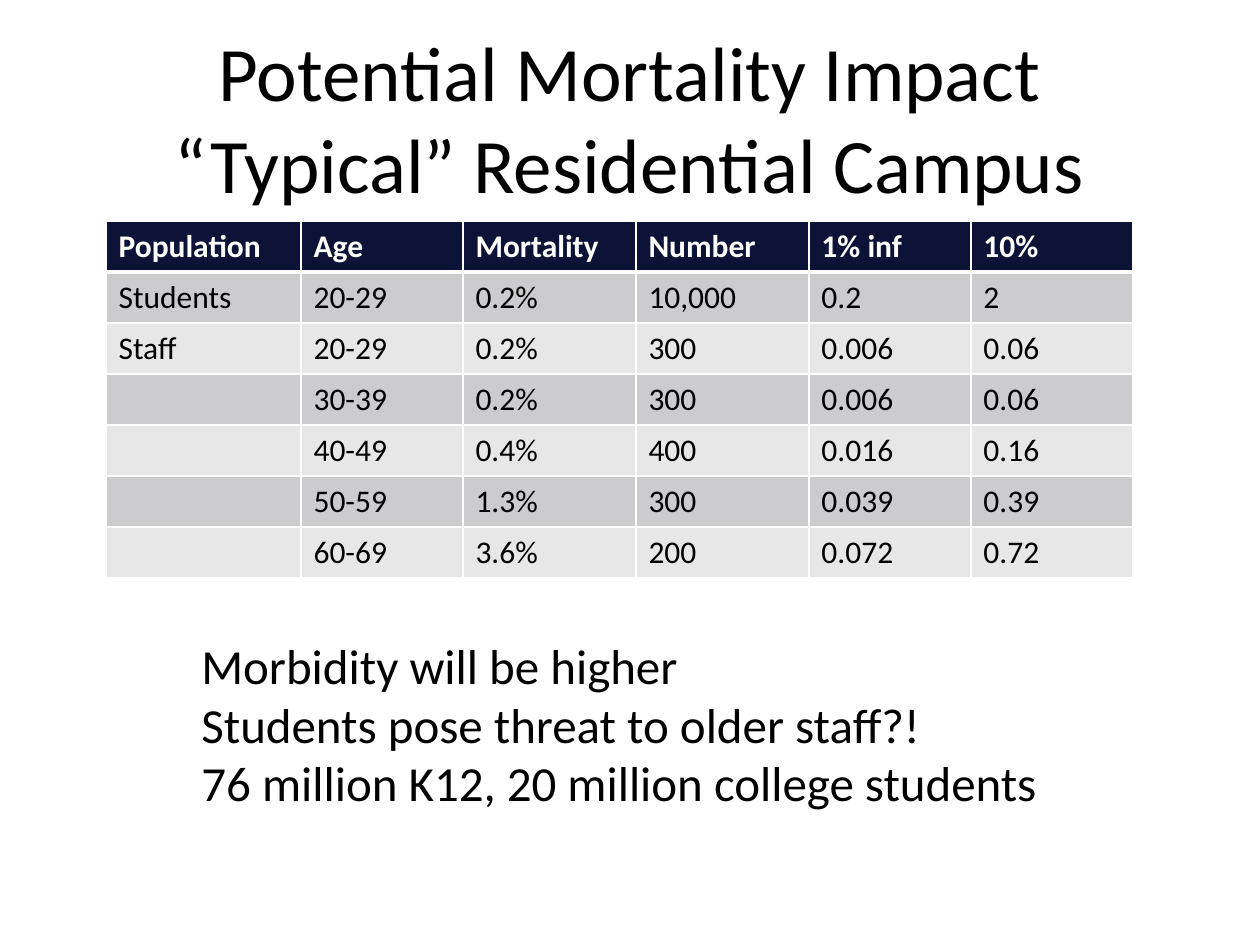
from lxml.etree import SubElement
from pptx import Presentation
from pptx.dml.color import RGBColor as RGB
from pptx.enum.text import MSO_ANCHOR as Anchor, PP_ALIGN as Align
from pptx.oxml.ns import qn
from pptx.util import Emu, Pt

PX = 914400 // 126
COLORS = {
    "text": "000000",
    "white": "FFFFFF",
    "header": "0D1337",
    "odd_row": "CCCCCE",
    "even_row": "E7E7E8",
}


def write_text(frame, lines, size, color="text", bold=False, align=Align.LEFT):
    for index, line in enumerate(lines):
        paragraph = frame.paragraphs[0] if index == 0 else frame.add_paragraph()
        paragraph.text = line
        paragraph.alignment = align
        for run in paragraph.runs:
            run.font.name = "Calibri"
            run.font.size = Pt(size)
            run.font.bold = bold
            run.font.color.rgb = RGB.from_string(COLORS[color])


def style_cell(cell, fill, top, bottom):
    """Give the cell white borders, with top and bottom widths in points, and a fill."""
    properties = cell._tc.get_or_add_tcPr()
    for side, width in (("L", 1), ("R", 1), ("T", top), ("B", bottom)):
        line = SubElement(properties, qn(f"a:ln{side}"), w=str(Pt(width)))
        solid = SubElement(line, qn("a:solidFill"))
        SubElement(solid, qn("a:srgbClr"), val=COLORS["white"])
    cell.fill.solid()
    cell.fill.fore_color.rgb = RGB.from_string(COLORS[fill])


presentation = Presentation()
presentation.slide_width = Emu(1260 * PX)
presentation.slide_height = Emu(945 * PX)
slide = presentation.slides.add_slide(presentation.slide_layouts[6])

# Title: one paragraph with a line break
title = slide.shapes.add_textbox(63 * PX, 38 * PX, 1134 * PX, 157 * PX).text_frame
title.word_wrap = True
title.vertical_anchor = Anchor.MIDDLE
write_text(title, ["Potential Mortality Impact\v“Typical” Residential Campus"],
           size=44, align=Align.CENTER)

# Mortality table
ROWS = [
    ["Population", "Age", "Mortality", "Number", "1% inf", "10%"],
    ["Students", "20-29", "0.2%", "10,000", "0.2", "2"],
    ["Staff", "20-29", "0.2%", "300", "0.006", "0.06"],
    ["", "30-39", "0.2%", "300", "0.006", "0.06"],
    ["", "40-49", "0.4%", "400", "0.016", "0.16"],
    ["", "50-59", "1.3%", "300", "0.039", "0.39"],
    ["", "60-69", "3.6%", "200", "0.072", "0.72"],
]
COLUMN_WIDTHS = [195, 162, 173, 173, 162, 162]
ROW_HEIGHT = 51

table = slide.shapes.add_table(
    len(ROWS), len(COLUMN_WIDTHS), 106 * PX, 221 * PX,
    sum(COLUMN_WIDTHS) * PX, len(ROWS) * ROW_HEIGHT * PX).table
for column, width in zip(table.columns, COLUMN_WIDTHS):
    column.width = Emu(width * PX)

for row_index, values in enumerate(ROWS):
    is_header = row_index == 0
    fill = "header" if is_header else "odd_row" if row_index % 2 else "even_row"
    for column_index, value in enumerate(values):
        cell = table.cell(row_index, column_index)
        style_cell(cell, fill, top=3 if row_index == 1 else 1, bottom=3 if is_header else 1)
        if value:
            write_text(cell.text_frame, [value], size=18, bold=is_header,
                       color="white" if is_header else "text")

# Remarks below the table
remarks = slide.shapes.add_textbox(189 * PX, 629 * PX, 944 * PX, 190 * PX).text_frame
remarks.word_wrap = True
write_text(remarks, [
    "Morbidity will be higher",
    "Students pose threat to older staff?!",
    "76 million K12, 20 million college students",
], size=28)

presentation.save("out.pptx")
